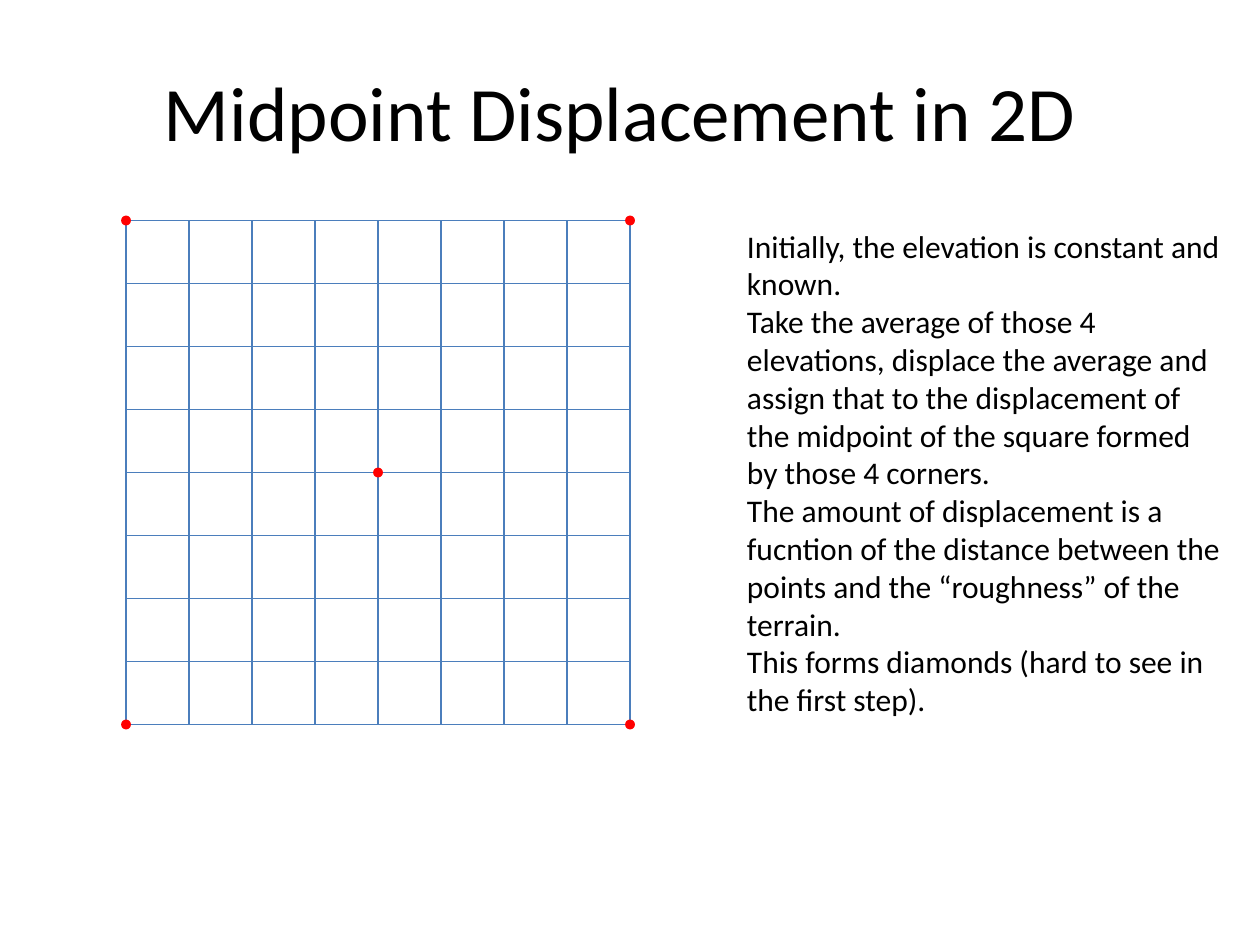
"""Build the slide on midpoint displacement over a square grid."""
from dataclasses import dataclass

import pptx
import pptx.dml.color
import pptx.enum.shapes
import pptx.enum.text
import pptx.oxml
import pptx.oxml.ns
import pptx.shapes.shapetree
import pptx.slide
import pptx.text.text
import pptx.util
from pptx.util import Inches

BLACK = pptx.dml.color.RGBColor(0x00, 0x00, 0x00)
GRID_BLUE = pptx.dml.color.RGBColor(0x4B, 0x7E, 0xBC)
POINT_RED = pptx.dml.color.RGBColor(0xFF, 0x00, 0x00)

GRID_LEFT, GRID_TOP = 1, 1.75
CELL_SIZE, CELL_COUNT = 0.5, 8
GRID_SIZE = CELL_SIZE * CELL_COUNT
GRID_RIGHT, GRID_BOTTOM = GRID_LEFT + GRID_SIZE, GRID_TOP + GRID_SIZE
DOT_SIZE = 0.05

EXPLANATION = [
    "Initially, the elevation is constant and known.",
    "Take the average of those 4 elevations, displace the average and assign that to "
    "the displacement of the midpoint of the square formed by those 4 corners.",
    "The amount of displacement is a fucntion of the distance between the points and "
    "the “roughness” of the terrain.",
    "This forms diamonds (hard to see in the first step).",
]


@dataclass(frozen=True)
class Point:
    x: float
    y: float


@dataclass(frozen=True)
class GridLine:
    start: Point
    end: Point


def format_paragraph(paragraph: pptx.text.text._Paragraph, size: float) -> None:
    paragraph.font.name = "Calibri"
    paragraph.font.size = pptx.util.Pt(size)
    paragraph.font.color.rgb = BLACK


def add_title(slide: pptx.slide.Slide) -> None:
    title = slide.shapes.title
    title.left, title.top = Inches(0.42), Inches(0.25)
    title.width, title.height = Inches(9), Inches(1.25)
    title.text_frame.text = "Midpoint Displacement in 2D"
    title.text_frame.vertical_anchor = pptx.enum.text.MSO_ANCHOR.MIDDLE
    paragraph = title.text_frame.paragraphs[0]
    paragraph.alignment = pptx.enum.text.PP_ALIGN.CENTER
    format_paragraph(paragraph, 44)


def add_explanation(slide: pptx.slide.Slide) -> None:
    text_box = slide.shapes.add_textbox(Inches(5.83), Inches(1.75), Inches(4), Inches(4.04))
    text_frame = text_box.text_frame
    text_frame.word_wrap = True
    text_frame.auto_size = pptx.enum.text.MSO_AUTO_SIZE.SHAPE_TO_FIT_TEXT
    text_frame.text = "\n".join(EXPLANATION)
    for paragraph in text_frame.paragraphs:
        format_paragraph(paragraph, 18)


def draw_line(shapes: pptx.shapes.shapetree.GroupShapes, line: GridLine) -> None:
    connector = shapes.add_connector(
        pptx.enum.shapes.MSO_CONNECTOR.STRAIGHT,
        Inches(line.start.x), Inches(line.start.y),
        Inches(line.end.x), Inches(line.end.y),
    )
    connector.line.color.rgb = GRID_BLUE
    connector.line.width = pptx.util.Pt(0.75)
    properties = connector._element.spPr
    properties.append(pptx.oxml.parse_xml(f"<a:effectLst {pptx.oxml.ns.nsdecls('a')}/>"))


def draw_dot(shapes: pptx.shapes.shapetree.GroupShapes, center: Point) -> None:
    dot = shapes.add_shape(
        pptx.enum.shapes.MSO_SHAPE.OVAL,
        Inches(center.x - DOT_SIZE / 2), Inches(center.y - DOT_SIZE / 2),
        Inches(DOT_SIZE), Inches(DOT_SIZE),
    )
    dot.shadow.inherit = False
    dot.fill.solid()
    dot.fill.fore_color.rgb = POINT_RED
    dot.line.color.rgb = POINT_RED
    dot.line.width = pptx.util.Pt(2)


def add_grid(slide: pptx.slide.Slide) -> None:
    offsets = [index * CELL_SIZE for index in range(CELL_COUNT + 1)]
    rows = [
        GridLine(Point(GRID_LEFT, GRID_TOP + offset), Point(GRID_RIGHT, GRID_TOP + offset))
        for offset in offsets
    ]
    columns = [
        GridLine(Point(GRID_LEFT + offset, GRID_BOTTOM), Point(GRID_LEFT + offset, GRID_TOP))
        for offset in offsets
    ]
    known_points = [
        Point(GRID_LEFT, GRID_TOP),
        Point(GRID_RIGHT, GRID_TOP),
        Point(GRID_RIGHT, GRID_BOTTOM),
        Point(GRID_LEFT, GRID_BOTTOM),
        Point(GRID_LEFT + GRID_SIZE / 2, GRID_TOP + GRID_SIZE / 2),
    ]
    group = slide.shapes.add_group_shape()
    for line in rows + columns:
        draw_line(group.shapes, line)
    for point in known_points:
        draw_dot(group.shapes, point)


def main() -> None:
    presentation = pptx.Presentation()
    presentation.slide_width = Inches(10)
    presentation.slide_height = Inches(7.5)
    slide = presentation.slides.add_slide(presentation.slide_layouts.get_by_name("Title Only"))
    add_title(slide)
    add_explanation(slide)
    add_grid(slide)
    presentation.save("out.pptx")


if __name__ == "__main__":
    main()
